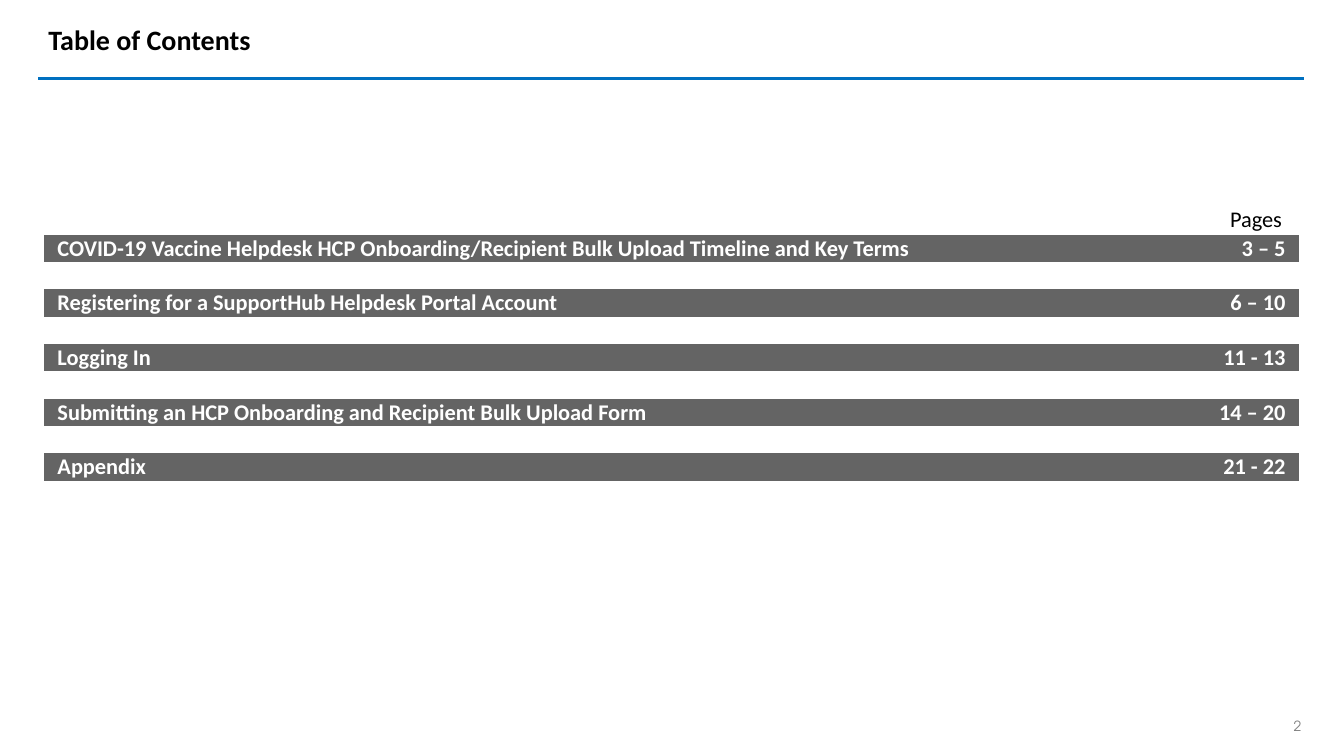
from dataclasses import dataclass
from typing import Any

import pptx
import pptx.dml.color
import pptx.enum.shapes
import pptx.enum.text
import pptx.oxml
import pptx.oxml.ns
import pptx.util
from lxml import etree

Inches = pptx.util.Inches
Pt = pptx.util.Pt
RGBColor = pptx.dml.color.RGBColor
Align = pptx.enum.text.PP_ALIGN
Anchor = pptx.enum.text.MSO_ANCHOR
AutoSize = pptx.enum.text.MSO_AUTO_SIZE

BLACK = RGBColor(0x00, 0x00, 0x00)
WHITE = RGBColor(0xFF, 0xFF, 0xFF)
BLUE = RGBColor(0x00, 0x70, 0xC0)
BAR_GRAY = RGBColor(0x64, 0x64, 0x64)
NUMBER_GRAY = RGBColor(0x80, 0x80, 0x80)

BODY_FONT = "Calibri"
NUMBER_FONT = "TeX Gyre Adventor"
BODY_SIZE = 16
ROW_HEIGHT = 0.27
COLUMN_WIDTHS = (10.11, 2.33)
PLAIN_TABLE_STYLE = "{2D5ABB26-0587-4C30-8999-92F81FD0307C}"


@dataclass(frozen=True)
class Section:
    title: str
    pages: str


SECTIONS = (
    Section("COVID-19 Vaccine Helpdesk HCP Onboarding/Recipient Bulk Upload Timeline and Key Terms", "3 – 5"),
    Section("Registering for a SupportHub Helpdesk Portal Account", "6 – 10"),
    Section("Logging In", "11 - 13"),
    Section("Submitting an HCP Onboarding and Recipient Bulk Upload Form", "14 – 20"),
    Section("Appendix", "21 - 22"),
)


def apply_format(target: Any, values: dict[str, Any]) -> None:
    for name, value in values.items():
        setattr(target, name, value)


def format_font(font: Any, size: float, color: RGBColor, bold: bool = False, name: str = BODY_FONT) -> None:
    apply_format(font, {"name": name, "size": Pt(size), "bold": bold})
    font.color.rgb = color


def insets(horizontal: float, vertical: float) -> dict[str, Any]:
    return {
        "margin_left": Inches(horizontal),
        "margin_right": Inches(horizontal),
        "margin_top": Inches(vertical),
        "margin_bottom": Inches(vertical),
    }


def place(shape: Any, left: float, top: float, width: float, height: float) -> None:
    apply_format(shape, {
        "left": Inches(left), "top": Inches(top),
        "width": Inches(width), "height": Inches(height),
    })


def add_title(slide: Any) -> None:
    title = slide.shapes.title
    place(title, 0.38, -0.01, 12.55, 0.79)
    apply_format(title.text_frame, {
        "text": "Table of Contents", "vertical_anchor": Anchor.MIDDLE,
        "auto_size": AutoSize.NONE, "word_wrap": True,
    })
    paragraph = title.text_frame.paragraphs[0]
    paragraph.alignment = Align.LEFT
    format_font(paragraph.runs[0].font, 20, BLACK, bold=True)


def add_title_rule(slide: Any) -> None:
    rule = slide.shapes.add_connector(
        pptx.enum.shapes.MSO_CONNECTOR.STRAIGHT,
        Inches(0.38), Inches(0.78), Inches(12.93), Inches(0.78),
    )
    rule.line.color.rgb = BLUE
    rule.line.width = Pt(2.25)
    etree.SubElement(rule._element.spPr, pptx.oxml.ns.qn("a:effectLst"))


def fill_bar_cell(cell: Any, text: str, alignment: Any, level: int) -> None:
    cell.fill.solid()
    cell.fill.fore_color.rgb = BAR_GRAY
    cell.text = text
    paragraph = cell.text_frame.paragraphs[0]
    apply_format(paragraph, {"alignment": alignment, "level": level})
    format_font(paragraph.runs[0].font, BODY_SIZE, WHITE, bold=True)


def clear_gap_cell(cell: Any) -> None:
    cell.fill.background()
    end = etree.SubElement(cell.text_frame.paragraphs[0]._p, pptx.oxml.ns.qn("a:endParaRPr"))
    end.set("sz", "1200")


def add_contents_table(slide: Any) -> None:
    row_count = 2 * len(SECTIONS)
    frame = slide.shapes.add_table(
        row_count, len(COLUMN_WIDTHS), Inches(0.44), Inches(2.33),
        Inches(sum(COLUMN_WIDTHS)), Inches(row_count * ROW_HEIGHT),
    )
    table = frame.table
    apply_format(table, {"first_row": False, "horz_banding": False})
    table._tbl.tblPr.find(pptx.oxml.ns.qn("a:tableStyleId")).text = PLAIN_TABLE_STYLE
    for column, width in zip(table.columns, COLUMN_WIDTHS):
        column.width = Inches(width)
    for row in table.rows:
        row.height = Inches(ROW_HEIGHT)
    for cell in table.iter_cells():
        apply_format(cell, {**insets(0.13, 0), "vertical_anchor": Anchor.MIDDLE})
    for index, section in enumerate(SECTIONS):
        fill_bar_cell(table.cell(2 * index, 0), section.title, Align.LEFT, 0)
        fill_bar_cell(table.cell(2 * index, 1), section.pages, Align.RIGHT, 1)
        for column_index in range(len(COLUMN_WIDTHS)):
            clear_gap_cell(table.cell(2 * index + 1, column_index))


def add_pages_label(slide: Any) -> None:
    label = slide.shapes.add_textbox(Inches(12.07), Inches(1.97), Inches(0.86), Inches(0.4))
    apply_format(label.text_frame, {
        **insets(0.13, 0.07), "text": "Pages", "word_wrap": False,
        "vertical_anchor": Anchor.MIDDLE,
    })
    format_font(label.text_frame.paragraphs[0].runs[0].font, BODY_SIZE, BLACK)


def add_slide_number(slide: Any) -> None:
    box = slide.shapes.add_textbox(Inches(12.64), Inches(7.12), Inches(0.46), Inches(0.17))
    apply_format(box.text_frame, {
        **insets(0, 0), "text": "2", "word_wrap": True, "vertical_anchor": Anchor.MIDDLE,
    })
    paragraph = box.text_frame.paragraphs[0]
    paragraph.alignment = Align.CENTER
    format_font(paragraph.runs[0].font, 10, NUMBER_GRAY, name=NUMBER_FONT)


def main() -> None:
    presentation = pptx.Presentation()
    presentation.slide_width = Inches(13.33)
    presentation.slide_height = Inches(7.5)
    slide = presentation.slides.add_slide(presentation.slide_layouts[5])
    add_title(slide)
    add_title_rule(slide)
    add_contents_table(slide)
    add_pages_label(slide)
    add_slide_number(slide)
    presentation.save("out.pptx")


if __name__ == "__main__":
    main()
